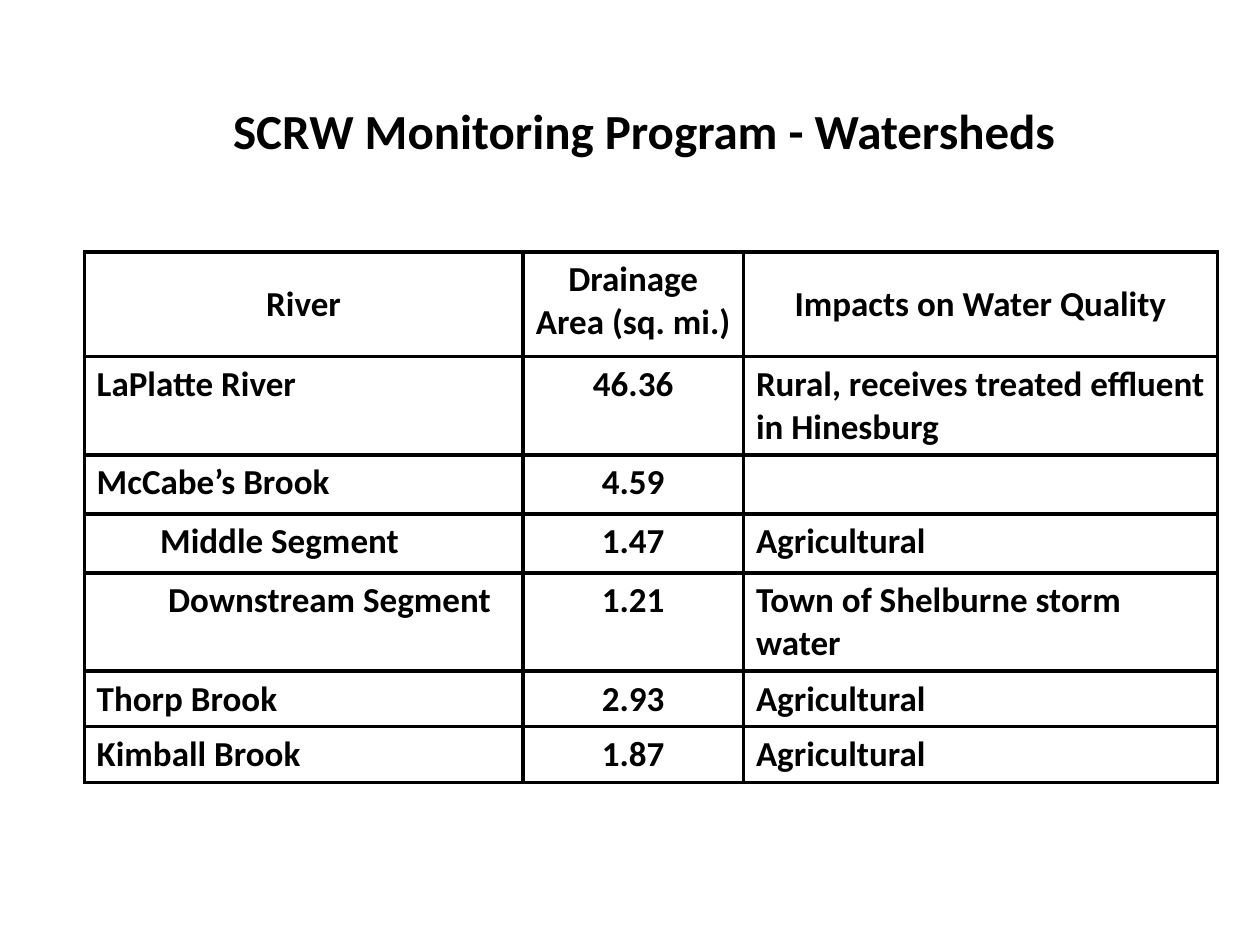
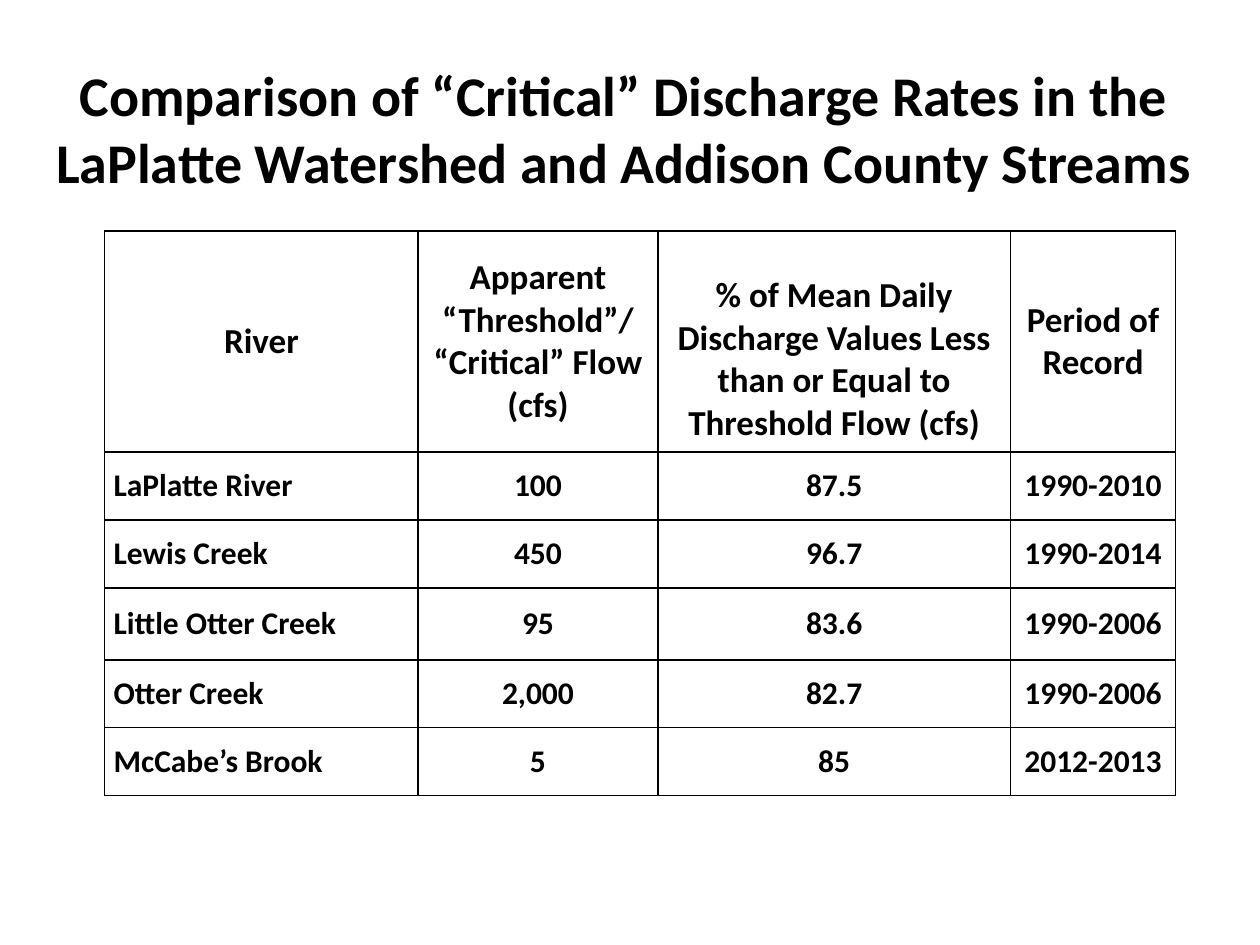
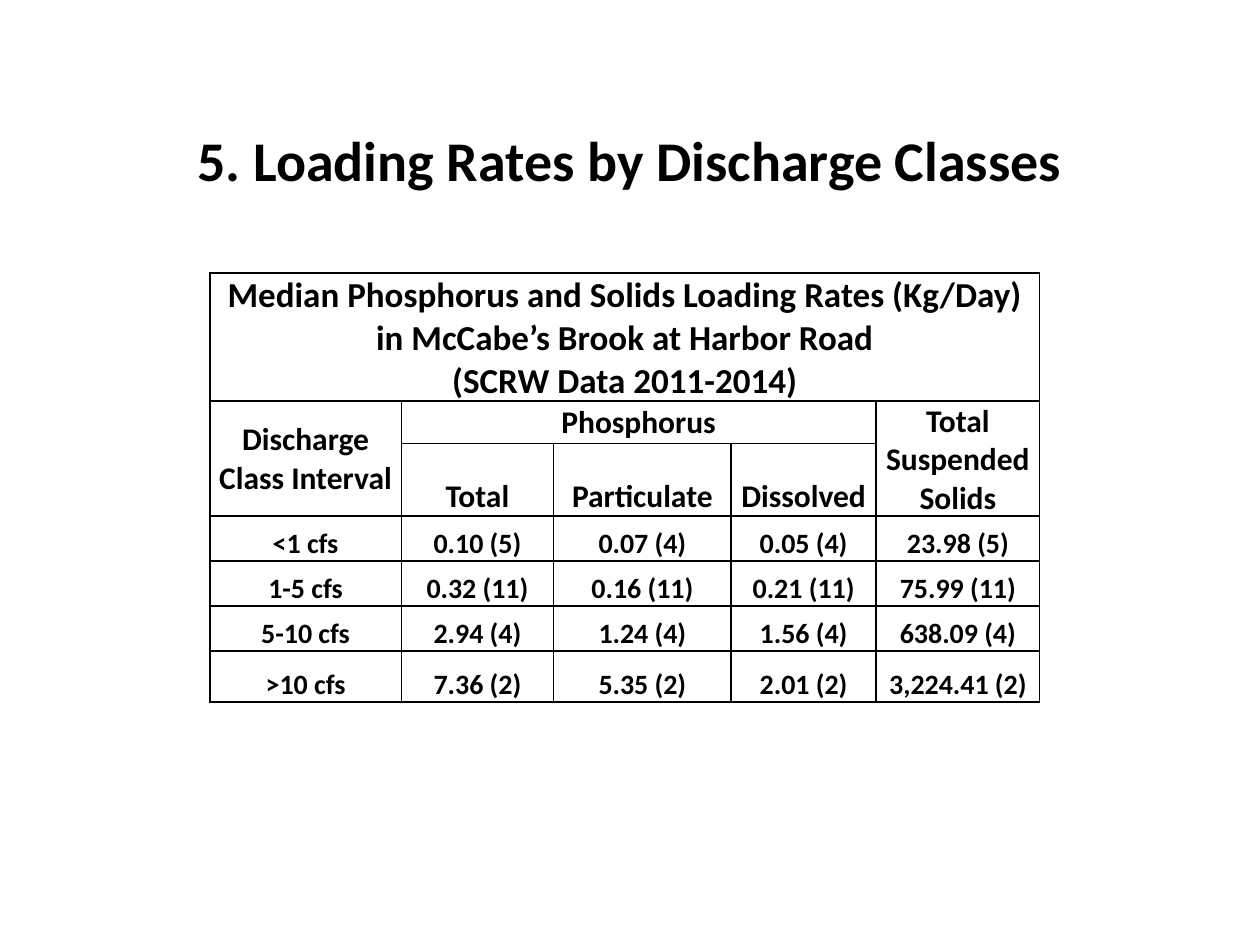
from dataclasses import dataclass, field
from typing import Any

from lxml.etree import SubElement as Sub
from pptx import Presentation
from pptx.dml.color import RGBColor as Rgb
from pptx.enum.text import MSO_ANCHOR as Anchor, PP_ALIGN as Align
from pptx.oxml.ns import qn
from pptx.util import Cm, Pt

FONT = "Calibri"
INK = "000000"
TOP, MID, LOW = Anchor.TOP, Anchor.MIDDLE, Anchor.BOTTOM
SIDES = ("left", "top", "right", "bottom")


@dataclass
class Title:
    text: str
    box: tuple[float, float, float, float]
    size: int
    align: Any = Align.CENTER


@dataclass
class Grid:
    """A table in cm; sizes and anchors go by row, aligns by column below the header."""
    left: float
    top: float
    widths: list[float]
    heights: list[float]
    rows: list[list[str]]
    sizes: list[int]
    anchors: list[Any]
    aligns: list[Any]
    weight: float
    pads: tuple[float, float, float, float]
    spans: list[tuple[int, int, int, int]] = field(default_factory=list)
    tweaks: dict[tuple[int, int], dict[str, Any]] = field(default_factory=dict)


def color(code: str) -> Rgb:
    return Rgb.from_string(code)


def apply(target: Any, values: dict[str, Any]) -> None:
    for name, value in values.items():
        setattr(target, name, value)


def write(frame: Any, text: str, size: int, align: Any) -> None:
    """Put each line of the text in its own paragraph."""
    for i, line in enumerate(text.split("\n")):
        para = frame.add_paragraph() if i else frame.paragraphs[0]
        para.alignment = align
        if line:
            run = para.add_run()
            run.text = line
            apply(run.font, {"name": FONT, "size": Pt(size), "bold": True})
            run.font.color.rgb = color(INK)


def border(cell: Any, weight: float) -> None:
    props = cell._tc.get_or_add_tcPr()
    for side in ("lnL", "lnR", "lnT", "lnB"):
        line = Sub(props, qn(f"a:{side}"), w=str(Pt(weight)))
        Sub(Sub(line, qn("a:solidFill")), qn("a:srgbClr"), val=INK)


def add_title(slide: Any, title: Title) -> None:
    frame = slide.shapes.add_textbox(*map(Cm, title.box)).text_frame
    apply(frame, {"word_wrap": True, "vertical_anchor": MID})
    write(frame, title.text, title.size, title.align)


def add_grid(slide: Any, grid: Grid) -> None:
    area = (grid.left, grid.top, sum(grid.widths), sum(grid.heights))
    table = slide.shapes.add_table(
        len(grid.heights), len(grid.widths), *map(Cm, area)).table
    apply(table, {"first_row": False, "horz_banding": False})
    for col, width in zip(table.columns, grid.widths):
        col.width = Cm(width)
    for row, height in zip(table.rows, grid.heights):
        row.height = Cm(height)
    for r, texts in enumerate(grid.rows):
        for c, text in enumerate(texts):
            cell = table.cell(r, c)
            border(cell, grid.weight)
            cell.fill.background()
            pads = {f"margin_{s}": Cm(p) for s, p in zip(SIDES, grid.pads)}
            apply(cell, {"vertical_anchor": grid.anchors[r], **pads,
                         **grid.tweaks.get((r, c), {})})
            align = grid.aligns[c] if r else Align.CENTER
            write(cell.text_frame, text, grid.sizes[r], align)
    for r, c, last_r, last_c in grid.spans:
        table.cell(r, c).merge(table.cell(last_r, last_c))


SHEDS = Grid(
    1.7, 5.08, [8.84, 4.45, 9.55], [2.11, 1.98, 1.19, 1.19, 1.98, 1.12, 1.12],
    [
        ["River", "Drainage\nArea (sq. mi.)", "Impacts on Water Quality"],
        ["LaPlatte River", "46.36", "Rural, receives treated effluent in Hinesburg"],
        ["McCabe’s Brook", "4.59", ""],
        ["Middle Segment", "1.47", "Agricultural"],
        ["Downstream Segment", "1.21", "Town of Shelburne storm water"],
        ["Thorp Brook", "2.93", "Agricultural"],
        ["Kimball Brook", "1.87", "Agricultural"],
    ],
    sizes=[20] * 7, anchors=[MID] + [TOP] * 6,
    aligns=[Align.LEFT, Align.CENTER, Align.LEFT],
    weight=2.25, pads=(0.25, 0.13, 0.25, 0.13),
    tweaks={
        (0, 1): {"vertical_anchor": TOP},
        (3, 0): {"margin_left": Cm(1.53)},
        (4, 0): {"margin_left": Cm(1.69)},
    },
)

FLOWS = Grid(
    2.11, 4.66, [6.32, 4.83, 7.11, 3.33], [4.45, 1.37, 1.37, 1.45, 1.37, 1.37],
    [
        ["River", "Apparent\n“Threshold”/\n“Critical” Flow (cfs)",
         "% of Mean Daily Discharge Values Less than or Equal to Threshold Flow (cfs)",
         "Period of Record"],
        ["LaPlatte River", "100", "87.5", "1990-2010"],
        ["Lewis Creek", "450", "96.7", "1990-2014"],
        ["Little Otter Creek", "95", "83.6", "1990-2006"],
        ["Otter Creek", "2,000", "82.7", "1990-2006"],
        ["McCabe’s Brook", "5", "85", "2012-2013"],
    ],
    sizes=[20] + [18] * 5, anchors=[MID] * 6,
    aligns=[Align.LEFT] + [Align.CENTER] * 3,
    weight=1, pads=(0.18, 0, 0.18, 0),
    tweaks={(0, 2): {"vertical_anchor": TOP, "margin_top": Cm(0.86)}},
)

LOADS = Grid(
    4.23, 5.5, [3.86, 3.07, 3.58, 2.92, 3.3],
    [2.58, 0.86, 1.45, 0.91, 0.91, 0.91, 1.02],
    [
        ["Median Phosphorus and Solids Loading Rates (Kg/Day) in McCabe’s Brook"
         " at Harbor Road\n(SCRW Data 2011-2014)", "", "", "", ""],
        ["Discharge Class Interval", "Phosphorus", "", "", "Total Suspended Solids"],
        ["", "Total", "Particulate", "Dissolved", ""],
        ["<1 cfs", "0.10 (5)", "0.07 (4)", "0.05 (4)", "23.98 (5)"],
        ["1-5 cfs", "0.32 (11)", "0.16 (11)", "0.21 (11)", "75.99 (11)"],
        ["5-10 cfs", "2.94 (4)", "1.24 (4)", "1.56 (4)", "638.09 (4)"],
        [">10 cfs", "7.36 (2)", "5.35 (2)", "2.01 (2)", "3,224.41 (2)"],
    ],
    sizes=[20, 18, 18] + [16] * 4, anchors=[MID] * 2 + [LOW] * 5,
    aligns=[Align.CENTER] * 5,
    weight=1, pads=(0.03, 0.03, 0.03, 0),
    spans=[(0, 0, 0, 4), (1, 0, 2, 0), (1, 1, 1, 3), (1, 4, 2, 4)],
)

PAGES = [
    (Title("SCRW Monitoring Program - Watersheds",
           (4.45, 1.9, 17.27, 1.45), 28, Align.LEFT), SHEDS),
    (Title("Comparison of “Critical” Discharge Rates in the\n"
           "LaPlatte Watershed and Addison County Streams",
           (0.64, 1.07, 23.88, 3), 32), FLOWS),
    (Title("5. Loading Rates by Discharge Classes",
           (1.27, 2.39, 22.86, 1.63), 32), LOADS),
]


def main() -> None:
    deck = Presentation()
    apply(deck, {"slide_width": Cm(25.4), "slide_height": Cm(19.05)})
    for title, grid in PAGES:
        slide = deck.slides.add_slide(deck.slide_layouts[6])
        add_title(slide, title)
        add_grid(slide, grid)
    deck.save("out.pptx")


if __name__ == "__main__":
    main()
